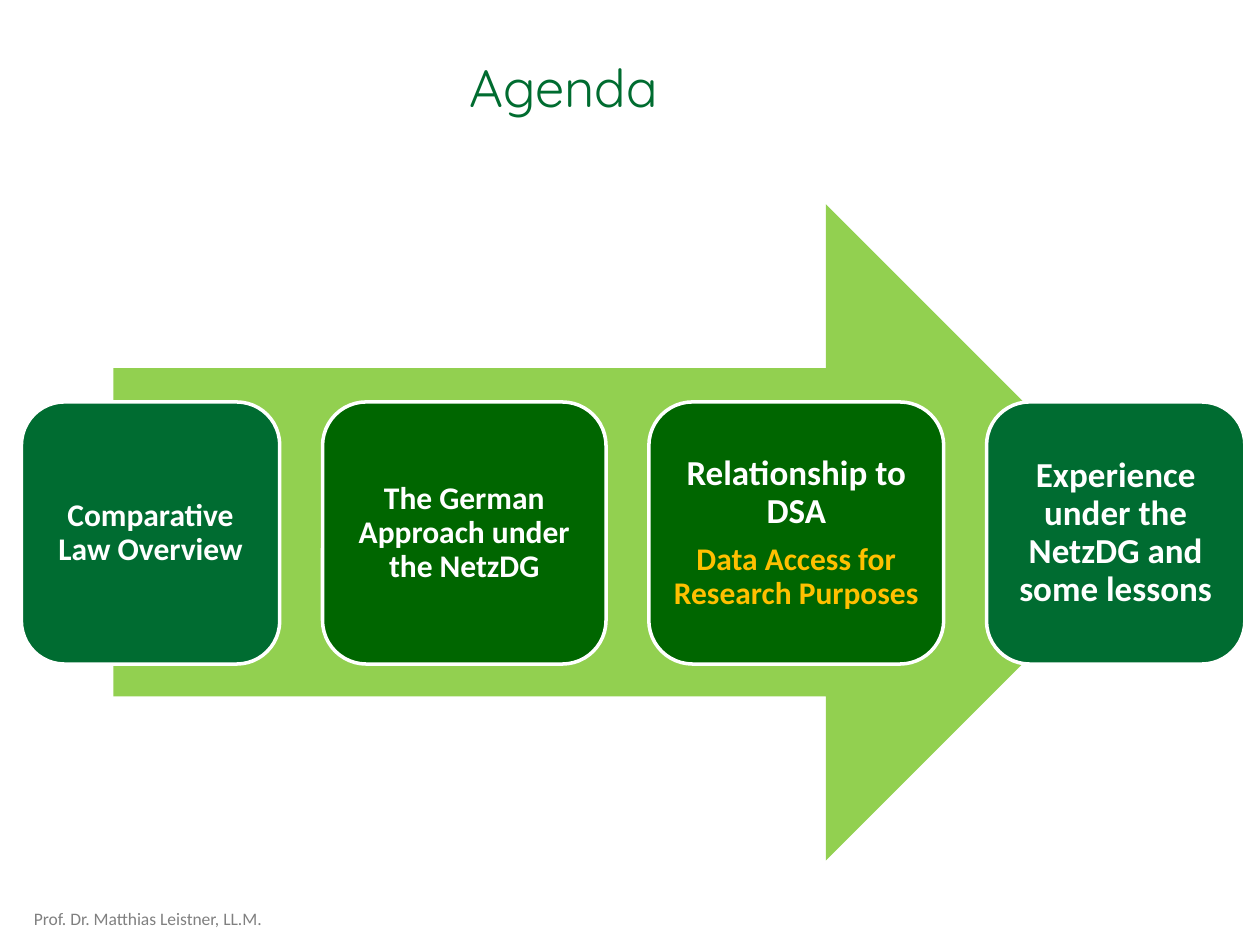
from pptx import Presentation
from pptx.dml.color import RGBColor
from pptx.enum import shapes, text
from pptx.util import Inches, Pt

COLORS = {
    "title": "006C30",
    "arrow": "92D050",
    "outer": "006C31",
    "inner": "006600",
    "accent": "FFC000",
    "footer": "808080",
    "white": "FFFFFF",
}


def color(name):
    return RGBColor.from_string(COLORS[name])


def write(para, words, *, size, fill, font="Calibri", bold=False,
          align=text.PP_ALIGN.LEFT, spacing=None, after=None):
    para.alignment = align
    if spacing:
        para.line_spacing = spacing
    if after:
        para.space_after = Pt(after)
    span = para.add_run()
    span.text = words
    span.font.name = font
    span.font.size = Pt(size)
    span.font.bold = bold
    span.font.color.rgb = color(fill)


class Agenda:
    """Draw the elements of an agenda slide in one style."""

    def __init__(self, page):
        self.page = page

    def label(self, words, left, top, width, height, *,
              anchor=text.MSO_ANCHOR.TOP, **style):
        box = self.page.shapes.add_textbox(
            Inches(left), Inches(top), Inches(width), Inches(height))
        box.text_frame.word_wrap = True
        box.text_frame.vertical_anchor = anchor
        write(box.text_frame.paragraphs[0], words, **style)

    def block(self, kind, left, top, width, height, fill):
        shape = self.page.shapes.add_shape(
            kind, Inches(left), Inches(top), Inches(width), Inches(height))
        shape.shadow.inherit = False
        shape.fill.solid()
        shape.fill.fore_color.rgb = color(fill)
        shape.line.fill.background()
        return shape

    def arrow(self, left, top, width, height):
        self.block(shapes.MSO_SHAPE.RIGHT_ARROW, left, top, width, height, "arrow")

    def card(self, left, top, width, height, fill, inset, lines):
        card = self.block(shapes.MSO_SHAPE.ROUNDED_RECTANGLE,
                          left, top, width, height, fill)
        card.line.color.rgb = color("white")
        card.line.width = Pt(2)
        frame = card.text_frame
        frame.word_wrap = True
        frame.vertical_anchor = text.MSO_ANCHOR.MIDDLE
        frame.margin_left = frame.margin_right = Inches(inset)
        frame.margin_top = frame.margin_bottom = Inches(inset)
        for index, (words, size, ink) in enumerate(lines):
            para = frame.add_paragraph() if index else frame.paragraphs[0]
            write(para, words, size=size, fill=ink, bold=True,
                  align=text.PP_ALIGN.CENTER, spacing=0.9, after=size * 0.35)


CARDS = [
    (2.05, "outer", 0.07, [("Comparative Law Overview", 18, "white")]),
    (2.25, "inner", 0.07, [("The German Approach under the NetzDG", 18, "white")]),
    (2.34, "inner", 0.08, [("Relationship to DSA", 20, "white"),
                           ("Data Access for Research Purposes", 18, "accent")]),
    (2.05, "outer", 0.08, [("Experience under the NetzDG and some lessons", 20, "white")]),
]
CARD_GAP = 0.34


def main():
    deck = Presentation()
    deck.slide_width, deck.slide_height = Inches(10), Inches(7.5)
    agenda = Agenda(deck.slides.add_slide(deck.slide_layouts[6]))

    agenda.label("Agenda", 2.32, 0.44, 4.31, 0.5, size=30, fill="title",
                 font="Quicksand", align=text.PP_ALIGN.CENTER,
                 anchor=text.MSO_ANCHOR.MIDDLE)
    agenda.arrow(0.9, 1.62, 8.26, 5.21)
    left = 0.17
    for width, fill, inset, lines in CARDS:
        agenda.card(left, 3.19, width, 2.08, fill, inset, lines)
        left += width + CARD_GAP
    agenda.label("Prof. Dr. Matthias Leistner, LL.M.", 0.17, 7.16, 3.25, 0.27,
                 size=10, fill="footer")
    deck.save("out.pptx")


if __name__ == "__main__":
    main()
